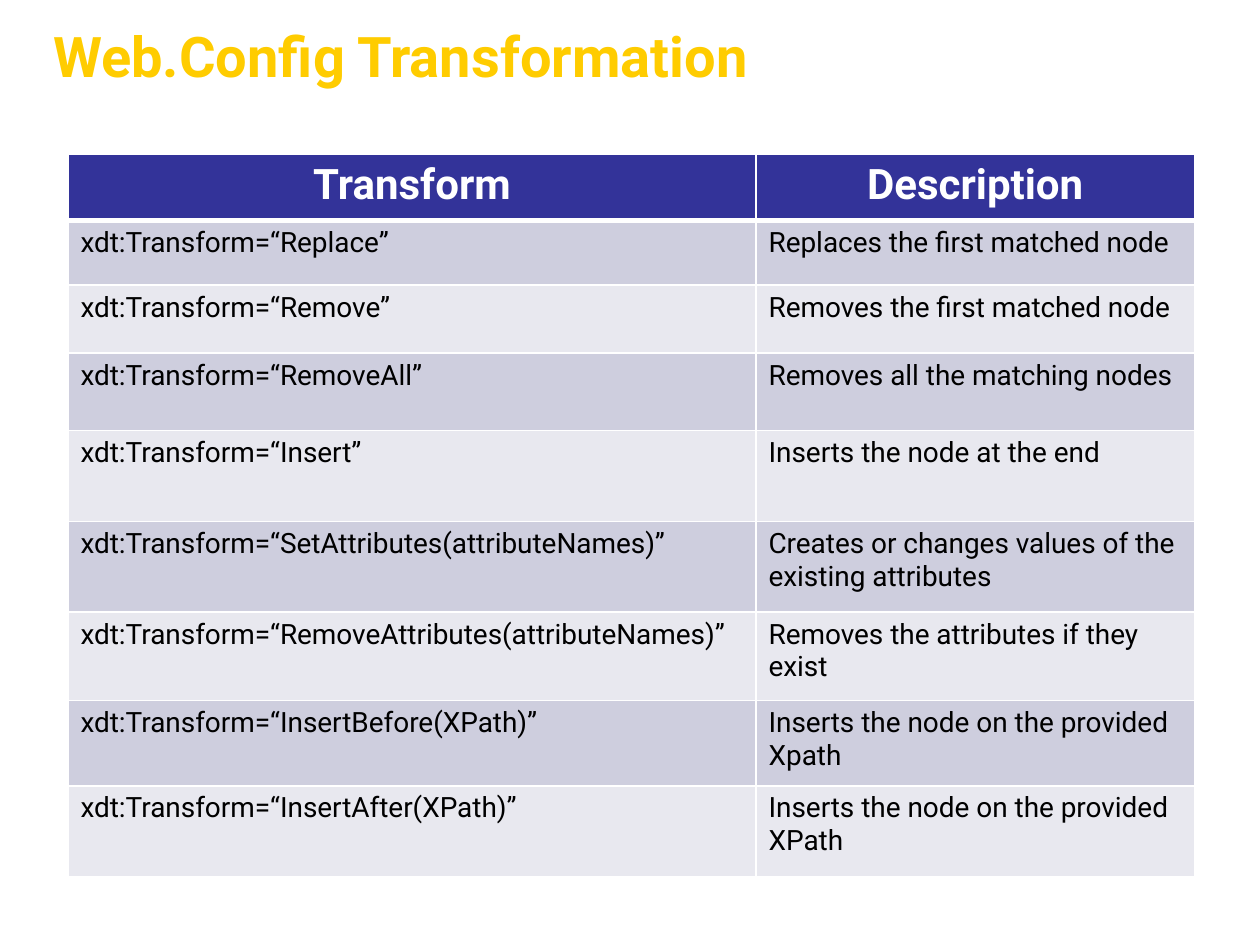
"""Build the slide that lists the Web.Config transforms."""
from dataclasses import dataclass

from lxml import etree
from pptx import Presentation
from pptx import util as u
from pptx.dml.color import RGBColor
from pptx.enum import text
from pptx.oxml import ns


@dataclass(frozen=True)
class Theme:
    font: str = "Roboto"
    title: str = "FFCC00"
    title_shadow: str = "000000"
    header: str = "333399"
    header_text: str = "FFFFFF"
    body_text: str = "000000"
    bands: tuple = ("CECEDE", "E8E8EF")
    border: str = "FFFFFF"
    title_size: int = 32
    header_size: int = 24
    body_size: int = 16
    border_width: int = 1
    header_rule: int = 3


TRANSFORMS = [
    ("Replace", "Replaces the first matched node"),
    ("Remove", "Removes the first matched node"),
    ("RemoveAll", "Removes all the matching nodes"),
    ("Insert", "Inserts the node at the end"),
    ("SetAttributes(attributeNames)", "Creates or changes values of the existing attributes"),
    ("RemoveAttributes(attributeNames)", "Removes the attributes if they exist"),
    ("InsertBefore(XPath)", "Inserts the node on the provided Xpath"),
    ("InsertAfter(XPath)", "Inserts the node on the provided XPath"),
]
COLUMN_WIDTHS = (13.87, 8.84)
ROW_HEIGHTS = (1.35, 1.3, 1.37, 1.56, 1.83, 1.83, 1.78, 1.72, 1.83)


class SlideBuilder:
    def __init__(self, slide, theme):
        self.slide = slide
        self.theme = theme

    def style(self, paragraph, size, color, bold=False):
        font = paragraph.font
        font.name = self.theme.font
        font.size = u.Pt(size)
        font.bold = bold
        font.color.rgb = RGBColor.from_string(color)

    def title(self, wording, left, top, width, height):
        frame = self.slide.shapes.add_textbox(
            u.Cm(left), u.Cm(top), u.Cm(width), u.Cm(height)).text_frame
        frame.word_wrap = True
        frame.margin_left = frame.margin_top = frame.margin_right = frame.margin_bottom = 0
        heading = frame.paragraphs[0]
        heading.text = wording
        self.style(heading, self.theme.title_size, self.theme.title, bold=True)
        self.shadow(heading.runs[0])

    def shadow(self, run):
        effects = etree.SubElement(run.font._element, ns.qn("a:effectLst"))
        outer = etree.SubElement(effects, ns.qn("a:outerShdw"),
                                 dist="25400", dir="5400000", algn="tl")
        etree.SubElement(outer, ns.qn("a:srgbClr"), val=self.theme.title_shadow)

    def borders(self, cell, bottom, top):
        properties = cell._tc.get_or_add_tcPr()
        side = self.theme.border_width
        for edge, width in (("L", side), ("R", side), ("T", top), ("B", bottom)):
            line = etree.SubElement(properties, ns.qn(f"a:ln{edge}"), w=str(u.Pt(width)))
            fill = etree.SubElement(line, ns.qn("a:solidFill"))
            etree.SubElement(fill, ns.qn("a:srgbClr"), val=self.theme.border)

    def cell(self, cell, wording, row):
        theme = self.theme
        header = row == 0
        self.borders(cell,
                     bottom=theme.header_rule if header else theme.border_width,
                     top=theme.header_rule if row == 1 else theme.border_width)
        cell.fill.solid()
        cell.fill.fore_color.rgb = RGBColor.from_string(
            theme.header if header else theme.bands[(row - 1) % 2])
        paragraph = cell.text_frame.paragraphs[0]
        paragraph.text = wording
        if header:
            paragraph.alignment = text.PP_ALIGN.CENTER
            self.style(paragraph, theme.header_size, theme.header_text, bold=True)
        else:
            self.style(paragraph, theme.body_size, theme.body_text)

    def table(self, rows, left, top, widths, heights):
        table = self.slide.shapes.add_table(
            len(rows), len(widths), u.Cm(left), u.Cm(top),
            u.Cm(sum(widths)), u.Cm(sum(heights))).table
        for column, width in zip(table.columns, widths):
            column.width = u.Cm(width)
        for row, (wordings, height) in enumerate(zip(rows, heights)):
            table.rows[row].height = u.Cm(height)
            for column, wording in enumerate(wordings):
                self.cell(table.cell(row, column), wording, row)


def main():
    deck = Presentation()
    deck.slide_width, deck.slide_height = u.Cm(25.4), u.Cm(19.05)
    builder = SlideBuilder(deck.slides.add_slide(deck.slide_layouts[6]), Theme())
    builder.title("Web.Config Transformation", 1.07, 0.43, 23.27, 1.37)
    rows = [("Transform", "Description")]
    rows += [(f"xdt:Transform=“{name}”", effect) for name, effect in TRANSFORMS]
    builder.table(rows, 1.37, 3.1, COLUMN_WIDTHS, ROW_HEIGHTS)
    deck.save("out.pptx")


if __name__ == "__main__":
    main()
